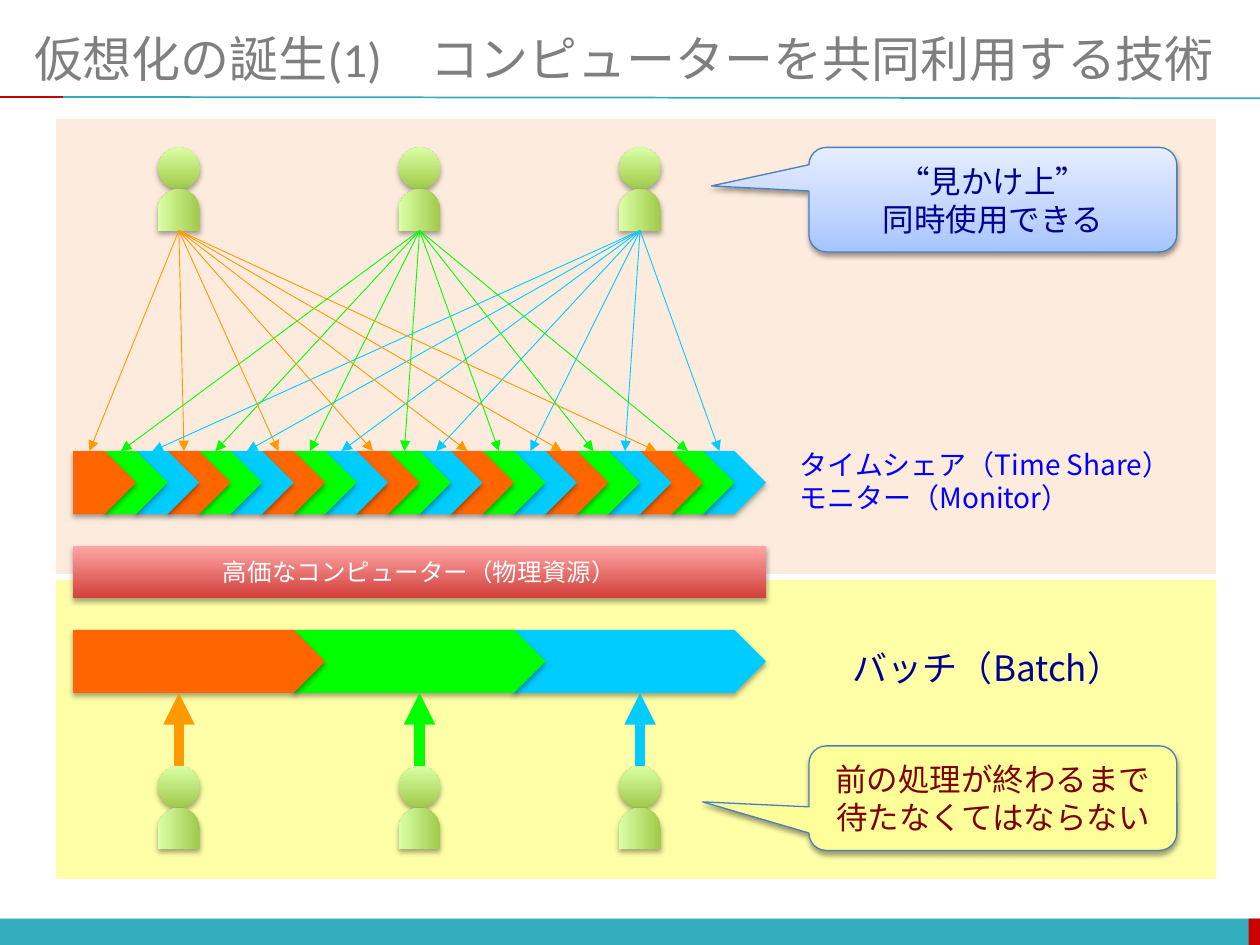
from lxml.etree import SubElement as Sub
from pptx import Presentation
from pptx.dml.color import RGBColor
from pptx.enum.shapes import MSO_CONNECTOR as Conn, MSO_SHAPE as Geo
from pptx.enum.text import MSO_ANCHOR as Anchor, MSO_AUTO_SIZE as Auto, PP_ALIGN as Align
from pptx.oxml.ns import qn
from pptx.util import Inches, Pt

CJK = "Noto Sans CJK JP"
PLATES = ["FF6600", "00FF00", "00CCFF"]
ARROWS = ["FF9900", "00FF00", "00CCFF"]
USERS = [1.0, 2.91, 4.66]  # user centres, from the left of a panel
GREEN = [(0, "A0CA4A"), (100, "DAFFA5")]
RED = [(0, "D1403C"), (100, "FFA6A5")]
BLUE = [(0, "A4C4FF"), (35, "BFD4FF"), (100, "E6EEFF")]
USER = 0.33


def color(code):
    return RGBColor.from_string(code)


def shade(shape, stops):
    """Fill with a gradient that runs from bottom to top."""
    shape.fill.gradient()
    shape.fill.gradient_angle = 90
    grad = shape.element.spPr.find(qn("a:gradFill"))
    grad.set("rotWithShape", "1")
    lst = grad.find(qn("a:gsLst"))
    for old in list(lst):
        lst.remove(old)
    for pos, code in stops:
        stop = Sub(lst, qn("a:gs"), pos=str(pos * 1000))
        Sub(stop, qn("a:srgbClr"), val=code)


def drop(shape, alpha=35, dist=1.8):
    """Cast a soft shadow straight down."""
    effects = shape.element.spPr.find(qn("a:effectLst"))
    outer = Sub(effects, qn("a:outerShdw"), blurRad=str(Pt(3.1)), dist=str(Pt(dist)),
                dir="5400000", rotWithShape="0")
    black = Sub(outer, qn("a:srgbClr"), val="000000")
    Sub(black, qn("a:alpha"), val=str(alpha * 1000))


def draw(shapes, geo, box, fill, line=None, width=0.75, alpha=None):
    shape = shapes.add_shape(geo, *map(Inches, box))
    shape.shadow.inherit = False
    if isinstance(fill, list):
        shade(shape, fill)
    else:
        shape.fill.solid()
        shape.fill.fore_color.rgb = color(fill)
    if alpha:
        tone = shape.element.spPr.find(qn("a:solidFill"))[0]
        Sub(tone, qn("a:alpha"), val=str(alpha * 1000))
    if line:
        shape.line.color.rgb = color(line)
        shape.line.width = Pt(width)
    else:
        shape.line.fill.background()
    return shape


def link(shapes, start, end, code, width, head=False):
    line = shapes.add_connector(Conn.STRAIGHT, *map(Inches, start + end))
    line.line.color.rgb = color(code)
    line.line.width = Pt(width)
    if head:
        Sub(line.line._get_or_add_ln(), qn("a:headEnd"), type="triangle")
    Sub(line.element.spPr, qn("a:effectLst"))
    return line


def write(shape, text, size, code, font=CJK, align=Align.CENTER, anchor=Anchor.MIDDLE, wrap=True):
    frame = shape.text_frame
    frame.text = text
    frame.word_wrap = wrap
    frame.auto_size = Auto.NONE if wrap else Auto.SHAPE_TO_FIT_TEXT
    frame.vertical_anchor = anchor
    for para in frame.paragraphs:
        para.alignment = align
        for run in para.runs:
            run.font.size = Pt(size)
            run.font.name = font
            run.font.color.rgb = color(code)
            Sub(run.font._element, qn("a:ea"), typeface=CJK)


def label(shapes, box, text, size, code):
    write(shapes.add_textbox(*map(Inches, box)), text, size, code,
          align=Align.LEFT, anchor=Anchor.TOP, wrap=False)


def callout(shapes, box, tip, fill, text, code, font):
    shape = draw(shapes, Geo.ROUNDED_RECTANGULAR_CALLOUT, box, fill, "4B7EBC")
    for i, value in enumerate((*tip, 0.167)):
        shape.adjustments[i] = value
    drop(shape, 38, 1.6)
    write(shape, text, 18, code, font)


def user(shapes, mid, top):
    """Draw one person and return the head."""
    left = mid - USER / 2
    head = draw(shapes, Geo.OVAL, (left, top, USER, USER), GREEN)
    body = draw(shapes, Geo.FLOWCHART_DELAY, (left, top + USER, USER, USER), GREEN)
    body.rotation = 270
    drop(head)
    drop(body)
    return head


def strip(shapes, left, top, count, step, width):
    """Draw overlapping plates, the leftmost in front."""
    for i in reversed(range(count)):
        drop(draw(shapes, Geo.PENTAGON, (left + i * step, top, width, 0.5), PLATES[i % 3]))


def share(shapes, x, y, w, h):
    """Time sharing: every user reaches every third slot."""
    draw(shapes, Geo.RECTANGLE, (x, y, w, h), "FDEADA", "FFFFFF", 3, 90)
    left, top, count, step = x + 0.16, y + 2.66, 21, 0.25
    strip(shapes, left, top, count, step, 0.5)
    for mid in USERS:
        user(shapes, x + mid, y + 0.25)
    for i in range(count):
        link(shapes, (left + 0.13 + i * step, top), (x + USERS[i % 3], y + 0.25 + 2 * USER),
             ARROWS[i % 3], 0.5, True)
    label(shapes, (x + 5.83, y + 2.58, 3.3, 0.69),
          "タイムシェア（Time Share）\nモニター（Monitor）", 16, "0000FF")
    callout(shapes, (x + 6, y + 0.25, 2.92, 0.83), (-0.765, -0.131), BLUE,
            "“見かけ上”\n同時使用できる", "000090", CJK)


def batch(shapes, x, y, w, h):
    """Batch: each user waits for one long slot."""
    draw(shapes, Geo.RECTANGLE, (x, y, w, h), "FFFF99", "FFFFFF", 3, 85)
    strip(shapes, x + 0.16, y + 0.42, 3, 1.75, 2)
    for mid, code in zip(USERS, ARROWS):
        head = user(shapes, x + mid, y + 1.5)
        arrow = link(shapes, (x + mid, y + 0.92), (x + mid, y + 1.5), code, 6, True)
        arrow.end_connect(head, 0)
    bar = draw(shapes, Geo.RECTANGLE, (x + 0.16, y - 0.25, 5.5, 0.42), RED)
    drop(bar)
    write(bar, "高価なコンピューター（物理資源）", 14, "FFFFFF", "Arial")
    label(shapes, (x + 6.25, y + 0.5, 2.48, 0.44), "バッチ（Batch）", 20, "000090")
    callout(shapes, (x + 6, y + 1.34, 2.92, 0.83), (-0.789, 0.036), "FFFF99",
            "前の処理が終わるまで\n待たなくてはならない", "800000", "Arial")


def frame(slide):
    """Place the title, its rule and the foot band."""
    title = slide.shapes.title
    title.left, title.top, title.width, title.height = map(Inches, (0.17, 0.17, 9.83, 0.58))
    write(title, "仮想化の誕生(1)　コンピューターを共同利用する技術", 28, "7F7F7F", "Calibri", Align.LEFT)
    draw(slide.shapes, Geo.RECTANGLE, (0, 7.29, 10, 0.22), "33ACBD")
    draw(slide.shapes, Geo.RECTANGLE, (9.91, 7.29, 0.1, 0.22), "CC0000")
    link(slide.shapes, (0.5, 0.77), (10, 0.78), "33ACBD", 1)
    link(slide.shapes, (0, 0.77), (0.5, 0.77), "CC0000", 1)


def main():
    deck = Presentation()
    deck.slide_width, deck.slide_height = Inches(10), Inches(7.5)
    slide = deck.slides.add_slide(deck.slide_layouts[5])
    frame(slide)
    share(slide.shapes.add_group_shape().shapes, 0.42, 0.92, 9.25, 3.67)
    batch(slide.shapes.add_group_shape().shapes, 0.42, 4.58, 9.25, 2.42)
    deck.save("out.pptx")


if __name__ == "__main__":
    main()
